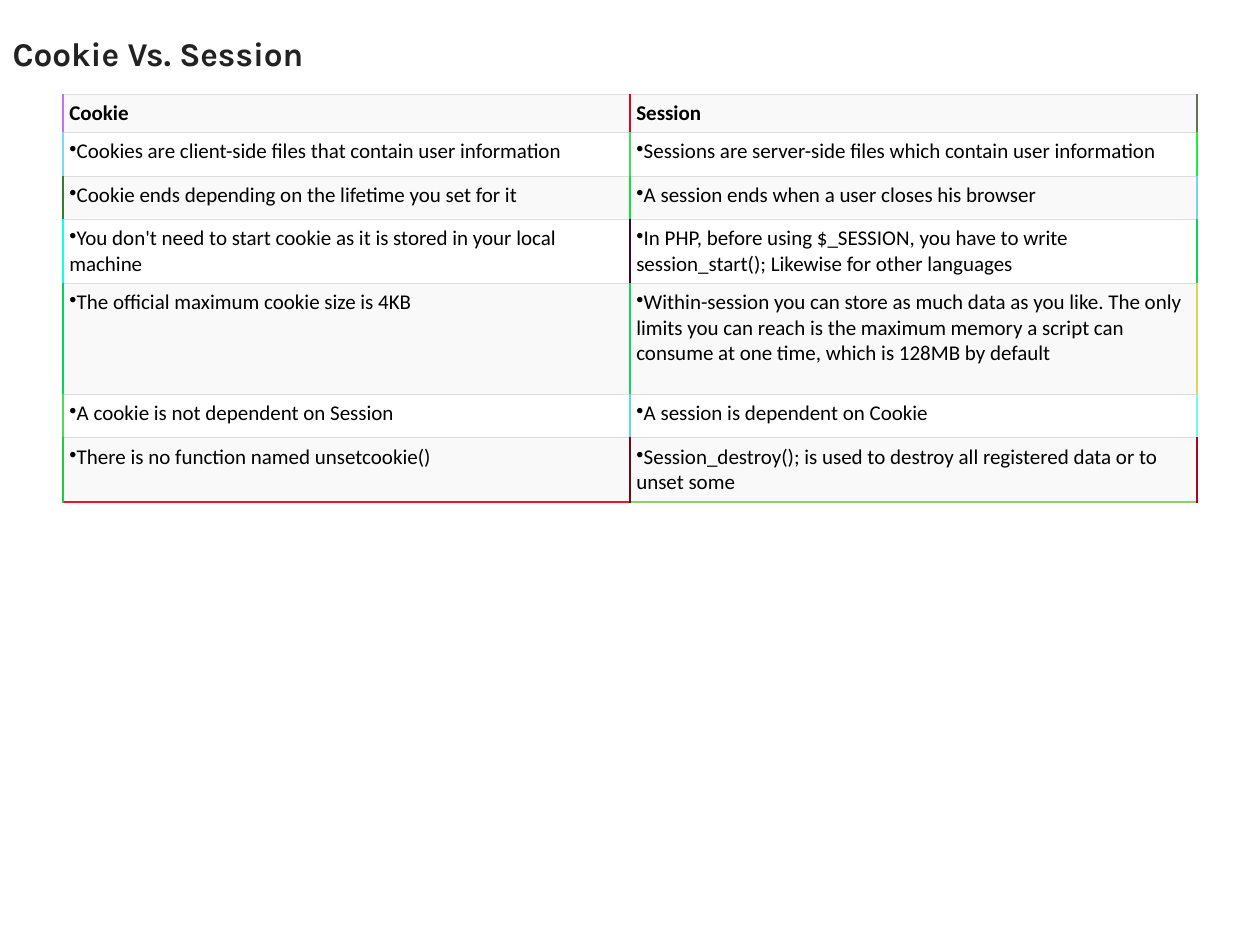
from dataclasses import dataclass

from lxml.etree import SubElement
from pptx import Presentation
from pptx.dml.color import RGBColor
from pptx.enum.text import MSO_ANCHOR, MSO_AUTO_SIZE, PP_ALIGN
from pptx.oxml.ns import qn
from pptx.util import Pt


@dataclass(frozen=True)
class Theme:
    title_font: str = "Karla"
    body_font: str = "Calibri"
    title_size: float = 19
    body_size: float = 12
    title_color: str = "222222"
    text_color: str = "000000"
    background: str = "FFFFFF"
    band: str = "F9F9F9"
    rule: str = "DDDDDD"
    rule_width: float = 0.75
    edge_width: float = 1
    cell_margin: float = 3.6


THEME = Theme()

# Row height, cookie text, session text, colours of the left, middle and right edges
ROWS = [
    (15.12, "Cookie", "Session", ("C073EE", "E0031F", "607551")),
    (24.8, "Cookies are client-side files that contain user information",
     "Sessions are server-side files which contain user information",
     ("80D6F6", "40DF58", "20EC3D")),
    (24.8, "Cookie ends depending on the lifetime you set for it",
     "A session ends when a user closes his browser",
     ("307E36", "10E13D", "70D8F6")),
    (34.6, "You don't need to start cookie as it is stored in your local machine",
     "In PHP, before using $_SESSION, you have to write session_start(); "
     "Likewise for other languages",
     ("10FFEE", "300B37", "10D058")),
    (63.6, "The official maximum cookie size is 4KB",
     "Within-session you can store as much data as you like. The only limits you "
     "can reach is the maximum memory a script can consume at one time, which is "
     "128MB by default",
     ("00D460", "10D560", "E0D460")),
    (24.8, "A cookie is not dependent on Session", "A session is dependent on Cookie",
     ("50D760", "60D9F6", "70FDEE")),
    (34.6, "There is no function named unsetcookie()",
     "Session_destroy(); is used to destroy all registered data or to unset some",
     ("20C84C", "70061F", "B0031F")),
]
BOTTOM_EDGES = ("F00F37", "90D060")


def style_font(paragraph, name, size, color, bold):
    for run in paragraph.runs:
        font = run.font
        font.name, font.size, font.bold = name, Pt(size), bold
        font.color.rgb = RGBColor.from_string(color)


def set_borders(cell, borders):
    """Draw (side, colour, width) borders, which must precede the cell's fill."""
    properties = cell._tc.get_or_add_tcPr()
    for side, color, width in borders:
        line = SubElement(properties, qn(f"a:ln{side}"), w=str(Pt(width)))
        SubElement(SubElement(line, qn("a:solidFill")), qn("a:srgbClr"), val=color)


def add_bullet(paragraph):
    properties = paragraph._p.get_or_add_pPr()
    properties.set("marL", "0")
    properties.set("indent", "0")
    SubElement(properties, qn("a:buChar"), char="•")


def place_title(slide, text, left, top, width, height):
    title = slide.shapes.title
    title.left, title.top, title.width, title.height = map(Pt, (left, top, width, height))
    title.fill.solid()
    title.fill.fore_color.rgb = RGBColor.from_string(THEME.background)
    frame = title.text_frame
    frame.text = text
    frame.word_wrap = True
    frame.auto_size = MSO_AUTO_SIZE.NONE
    frame.vertical_anchor = MSO_ANCHOR.MIDDLE
    paragraph = frame.paragraphs[0]
    paragraph.alignment = PP_ALIGN.LEFT
    style_font(paragraph, THEME.title_font, THEME.title_size, THEME.title_color, True)


def fill_cell(cell, text, is_header, is_banded, borders):
    cell.margin_left = cell.margin_right = Pt(THEME.cell_margin)
    cell.margin_top = cell.margin_bottom = Pt(THEME.cell_margin)
    set_borders(cell, borders)
    if is_banded:
        cell.fill.solid()
        cell.fill.fore_color.rgb = RGBColor.from_string(THEME.band)
    else:
        cell.fill.background()
    cell.text_frame.text = text
    paragraph = cell.text_frame.paragraphs[0]
    style_font(paragraph, THEME.body_font, THEME.body_size, THEME.text_color, is_header)
    if not is_header:
        add_bullet(paragraph)


def place_comparison(slide, rows, left, top, width):
    height = sum(row[0] for row in rows)
    table = slide.shapes.add_table(
        len(rows), 2, Pt(left), Pt(top), Pt(width), Pt(height)).table
    table.first_row = table.horz_banding = False
    for row_index, (row_height, *texts, edges) in enumerate(rows):
        table.rows[row_index].height = Pt(row_height)
        is_last = row_index == len(rows) - 1
        for column, text in enumerate(texts):
            bottom = ((BOTTOM_EDGES[column], THEME.edge_width) if is_last
                      else (THEME.rule, THEME.rule_width))
            borders = [
                ("L", edges[column], THEME.edge_width),
                ("R", edges[column + 1], THEME.edge_width),
                ("T", THEME.rule, THEME.rule_width),
                ("B", *bottom),
            ]
            fill_cell(table.cell(row_index, column), text,
                      row_index == 0, row_index % 2 == 0, borders)


def main():
    presentation = Presentation()
    presentation.slide_width, presentation.slide_height = Pt(720), Pt(540)
    slide = presentation.slides.add_slide(presentation.slide_layouts[5])
    place_title(slide, "Cookie Vs. Session", 0, 12.24, 720, 36)
    place_comparison(slide, ROWS, 36, 54, 648)
    presentation.save("out.pptx")


if __name__ == "__main__":
    main()
